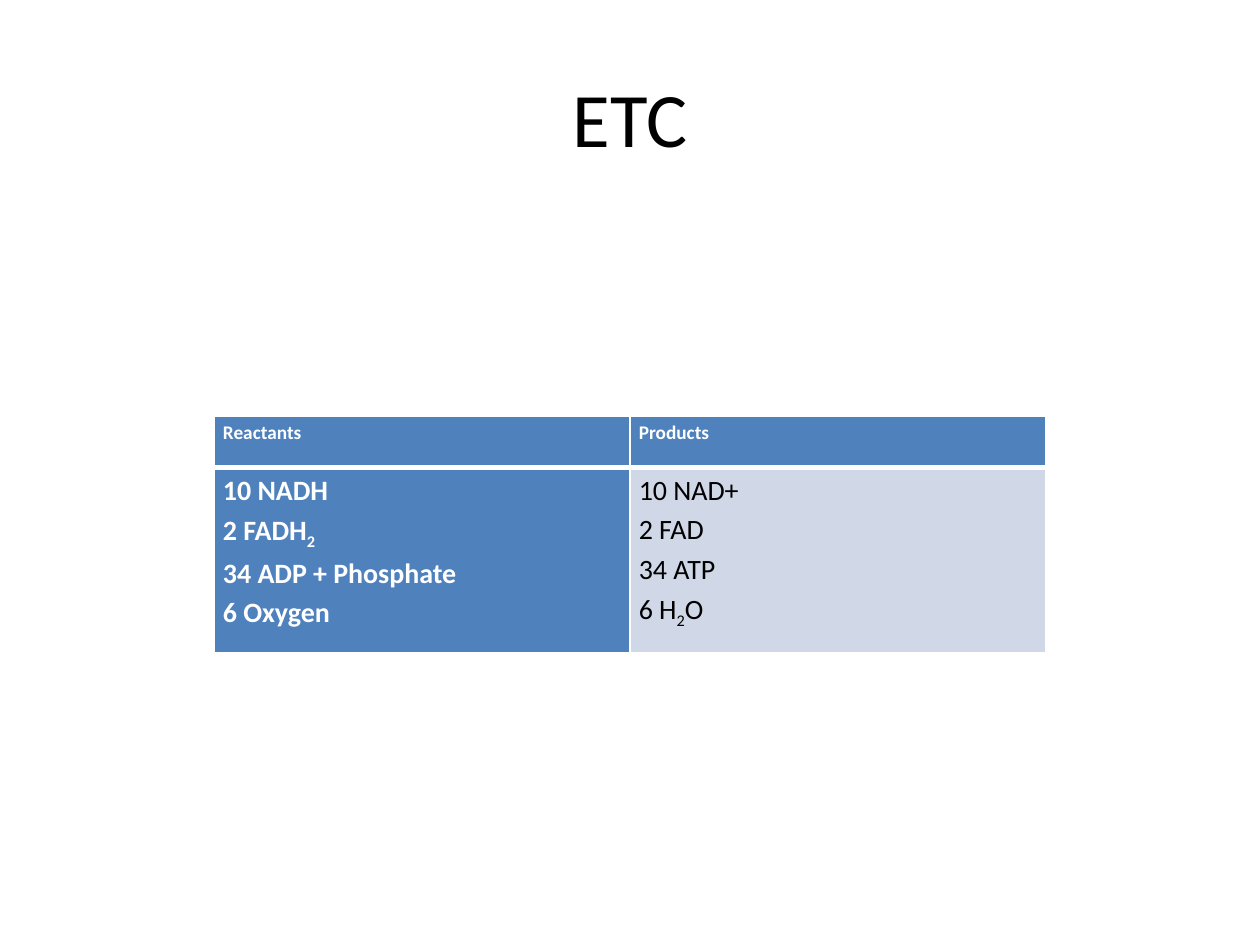
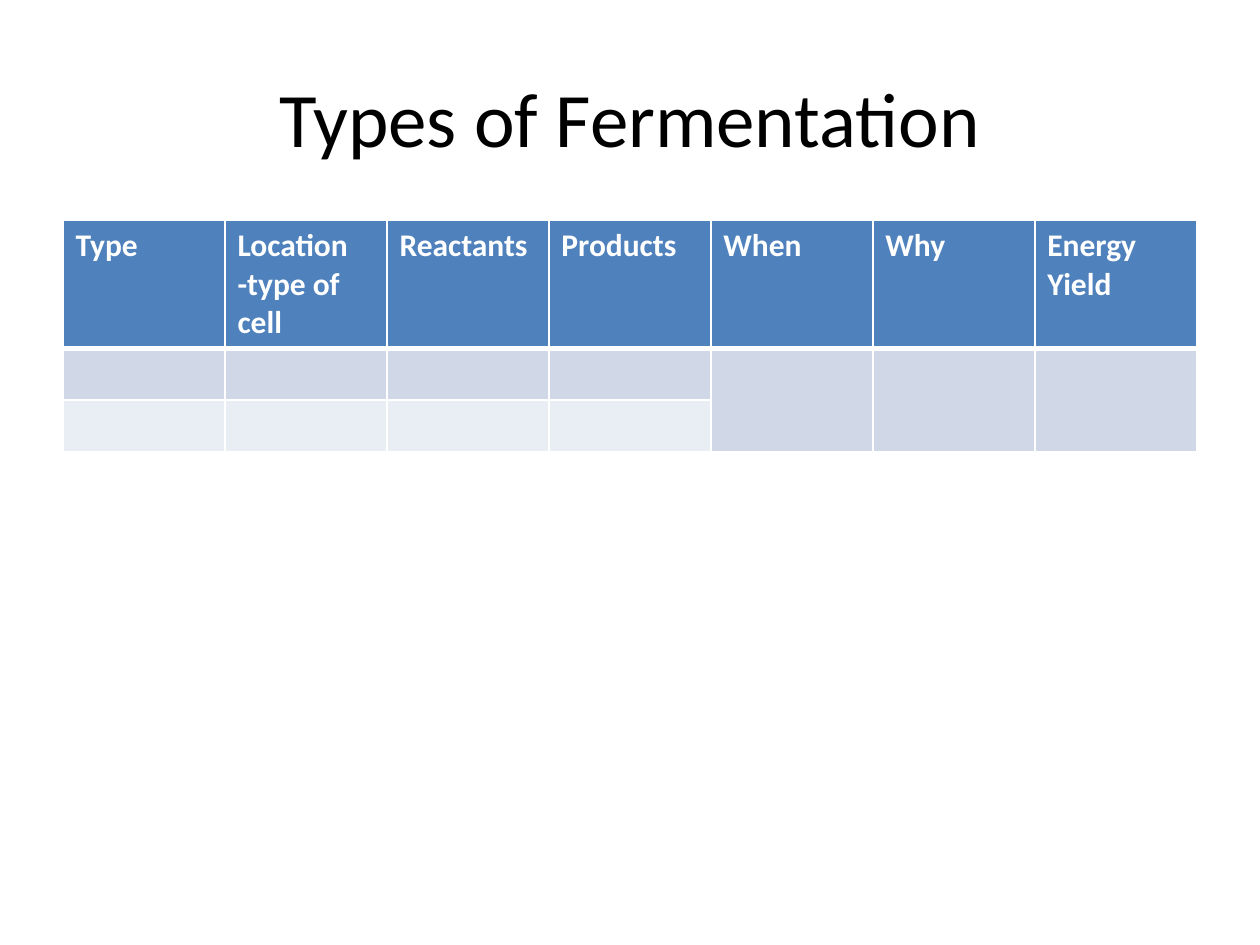
from lxml.etree import SubElement
from pptx import Presentation
from pptx.dml.color import RGBColor
from pptx.enum.text import MSO_ANCHOR, PP_ALIGN
from pptx.oxml.ns import qn
from pptx.util import Emu, Inches, Pt

COLORS = {
    "header": "4F81BD",
    "band": "D0D8E8",
    "light_band": "E9EDF4",
    "rule": "FFFFFF",
    "light_text": "FFFFFF",
    "dark_text": "000000",
}
FONT = "Calibri"
WIDTH, HEIGHT = Inches(10), Inches(7.5)
TITLE_AREA = (0.05, 0.04, 0.9, 1 / 6)
TIGHT_MARGINS = (0.07, 0.01, 0.07, 0)
NORMAL_MARGINS = (0.1, 0.05, 0.1, 0.05)
THIN_RULE, HEADER_RULE = 1, 3

ETC_HEADINGS = ["Reactants", "Products"]
ETC_REACTANTS = "10 NADH\n2 FADH_2_\n34 ADP + Phosphate\n6 Oxygen"
ETC_PRODUCTS = "10 NAD+\n2 FAD\n34 ATP\n6 H_2_O"
FERMENTATION_HEADINGS = [
    "Type", "Location\n-type of cell", "Reactants", "Products",
    "When", "Why", "Energy Yield",
]
MERGED_HEADINGS = ["When", "Why", "Energy Yield"]


def color(name):
    return RGBColor.from_string(COLORS[name])


def style_font(font, size, color_name, bold=False):
    font.name = FONT
    font.size = Pt(size)
    font.bold = bold
    font.color.rgb = color(color_name)


def add_page(deck, title):
    page = deck.slides.add_slide(deck.slide_layouts[5])
    box = page.shapes.title
    left, top, width, height = TITLE_AREA
    box.left, box.width = int(left * WIDTH), int(width * WIDTH)
    box.top, box.height = int(top * HEIGHT), int(height * HEIGHT)
    box.text_frame.text = title
    box.text_frame.vertical_anchor = MSO_ANCHOR.MIDDLE
    para = box.text_frame.paragraphs[0]
    para.alignment = PP_ALIGN.CENTER
    style_font(para.font, 44, "dark_text")
    return page


def add_grid(page, left, top, width, column_count, row_heights):
    height = Inches(sum(row_heights))
    frame = page.shapes.add_table(
        len(row_heights), column_count,
        int(left * WIDTH), int(top * HEIGHT), int(width * WIDTH), height)
    table = frame.table
    for row, row_height in zip(table.rows, row_heights):
        row.height = Inches(row_height)
    for row_index in range(len(row_heights)):
        for column in range(column_count):
            draw_borders(table.cell(row_index, column), row_index)
    return table


def draw_borders(cell, row_index):
    widths = {
        "lnL": THIN_RULE,
        "lnR": THIN_RULE,
        "lnT": HEADER_RULE if row_index == 1 else THIN_RULE,
        "lnB": HEADER_RULE if row_index == 0 else THIN_RULE,
    }
    properties = cell._tc.get_or_add_tcPr()
    for side, width in widths.items():
        line = SubElement(properties, qn(f"a:{side}"), w=str(Pt(width)))
        fill = SubElement(line, qn("a:solidFill"))
        SubElement(fill, qn("a:srgbClr"), val=COLORS["rule"])


def paint(cell, color_name, margins=NORMAL_MARGINS):
    cell.fill.solid()
    cell.fill.fore_color.rgb = color(color_name)
    (cell.margin_left, cell.margin_top,
     cell.margin_right, cell.margin_bottom) = map(Inches, margins)


def write(cell, text, size, color_name, bold):
    para = cell.text_frame.paragraphs[0]
    style_font(para.font, size, color_name, bold)
    for line_index, line in enumerate(text.split("\n")):
        if line_index:
            para.add_line_break()
        for part_index, part in enumerate(line.split("_")):
            if part:
                span = para.add_run()
                span.text = part
                if part_index % 2:
                    span.font._element.set("baseline", "-25000")
    return para


def write_spaced(cell, *text_style):
    para = write(cell, *text_style)
    para.line_spacing = 1.15
    para.space_after = Pt(10)


def add_etc_page(deck):
    page = add_page(deck, "ETC")
    table = add_grid(page, 0.17, 0.44, 0.66, len(ETC_HEADINGS), [0.41, 1.47])
    for column, heading in enumerate(ETC_HEADINGS):
        cell = table.cell(0, column)
        paint(cell, "header", TIGHT_MARGINS)
        write_spaced(cell, heading, 11, "light_text", True)
    reactants, products = table.cell(1, 0), table.cell(1, 1)
    paint(reactants, "header", TIGHT_MARGINS)
    write_spaced(reactants, ETC_REACTANTS, 16, "light_text", True)
    paint(products, "band", TIGHT_MARGINS)
    write_spaced(products, ETC_PRODUCTS, 16, "dark_text", False)


def add_fermentation_page(deck):
    page = add_page(deck, "Types of Fermentation")
    table = add_grid(page, 0.05, 7 / 30, 0.9,
                     len(FERMENTATION_HEADINGS), [1, 0.41, 0.41])
    for column, heading in enumerate(FERMENTATION_HEADINGS):
        header, upper, lower = (table.cell(row, column) for row in range(3))
        paint(header, "header")
        write(header, heading, 18, "light_text", True)
        paint(upper, "band")
        if heading in MERGED_HEADINGS:
            upper.merge(lower)
        else:
            paint(lower, "light_band")


def main():
    deck = Presentation()
    deck.slide_width, deck.slide_height = Emu(WIDTH), Emu(HEIGHT)
    add_etc_page(deck)
    add_fermentation_page(deck)
    deck.save("out.pptx")


if __name__ == "__main__":
    main()
